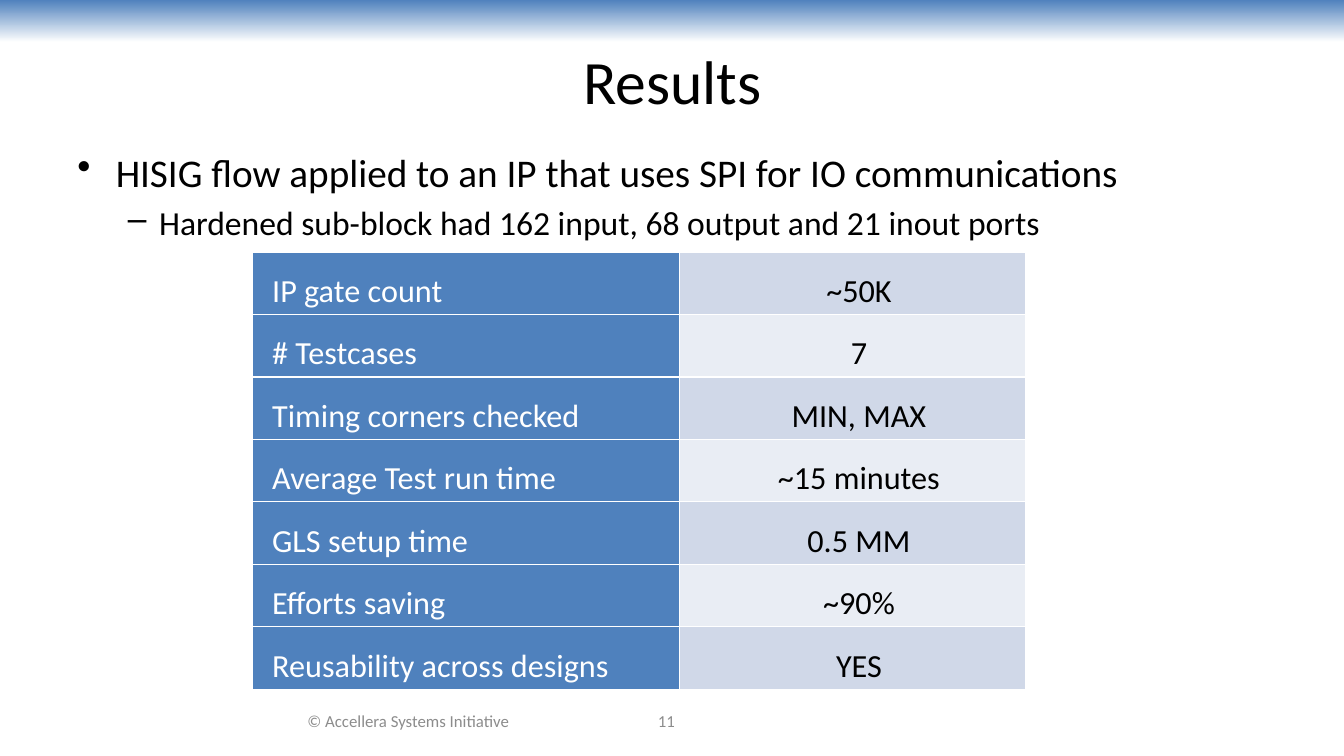
import pptx
import pptx.dml.color
import pptx.enum.shapes
import pptx.enum.text
import pptx.oxml
import pptx.oxml.ns
import pptx.util
from pptx.util import Inches

COLORS = {"blue": "4F81BD", "band_dark": "D0D8E8", "band_light": "E9EDF4",
          "white": "FFFFFF", "black": "000000", "gray": "8C8C8C"}
ALIGN = pptx.enum.text.PP_ALIGN
ANCHOR = pptx.enum.text.MSO_ANCHOR


def rgb(name):
    return pptx.dml.color.RGBColor.from_string(COLORS[name])


def write(p, text, size, color, align, margin=0, indent=0, bullet=None):
    """Fill a paragraph; margin and indent are in inches."""
    pPr = p._p.get_or_add_pPr()
    pPr.set("marL", str(Inches(margin)))
    pPr.set("indent", str(Inches(indent)))
    if bullet:
        pptx.oxml.ns.qn("a:buChar")
        bu = pptx.oxml.parse_xml(
            f'<a:buChar {pptx.oxml.ns.nsdecls("a")} char="{bullet}"/>')
        pPr.append(bu)
    p.alignment = align
    r = p.add_run()
    r.text = text
    for key, value in {"name": "Calibri", "size": pptx.util.Pt(size)}.items():
        setattr(r.font, key, value)
    r.font.color.rgb = rgb(color)


prs = pptx.Presentation()
prs.slide_width, prs.slide_height = Inches(13.33), Inches(7.5)
s = prs.slides.add_slide(prs.slide_layouts[6])

# Top band
band = s.shapes.add_shape(pptx.enum.shapes.MSO_SHAPE.RECTANGLE,
                          0, 0, prs.slide_width, Inches(0.42))
band.shadow.inherit = False
band.line.fill.background()
band.fill.gradient()
band.fill.gradient_angle = 270
for stop, position, color in zip(band.fill.gradient_stops, (0, 1), ("blue", "white")):
    stop.position = position
    stop.color.rgb = rgb(color)

# Title, bullets and footer
TEXTS = [
    ((0.67, 0.17, 12, 1.25), ANCHOR.MIDDLE,
     [("Results", 44, "black", ALIGN.CENTER)]),
    ((0.67, 1.42, 12, 1.08), ANCHOR.TOP,
     [("HISIG flow applied to an IP that uses SPI for IO communications",
       28, "black", ALIGN.LEFT, 0.38, -0.38, "•"),
      ("Hardened sub-block had 162 input, 68 output and 21 inout ports",
       24, "black", ALIGN.LEFT, 0.81, -0.31, "–")]),
    ((2.44, 6.95, 3.22, 0.4), ANCHOR.MIDDLE,
     [("© Accellera Systems Initiative", 12, "gray", ALIGN.CENTER)]),
    ((5.33, 6.95, 2.56, 0.4), ANCHOR.MIDDLE,
     [("11", 12, "gray", ALIGN.CENTER)]),
]
for box, anchor, paragraphs in TEXTS:
    tf = s.shapes.add_textbox(*map(Inches, box)).text_frame
    tf.word_wrap = True
    tf.vertical_anchor = anchor
    for i, paragraph in enumerate(paragraphs):
        p = tf.add_paragraph() if i else tf.paragraphs[0]
        write(p, *paragraph)
        if i:
            p.space_before = pptx.util.Pt(0.2 * paragraph[1])

# Results table
RESULTS = [
    ("IP gate count", "~50K"),
    ("# Testcases", "7"),
    ("Timing corners checked", "MIN, MAX"),
    ("Average Test run time", "~15 minutes"),
    ("GLS setup time", "0.5 MM"),
    ("Efforts saving", "~90%"),
    ("Reusability across designs", "YES"),
]
CELL_FORMAT = {"margin_left": Inches(0.07), "margin_right": Inches(0.07),
               "margin_top": 0, "margin_bottom": 0}
ROW_HEIGHT = 0.62
table = s.shapes.add_table(len(RESULTS), 2, Inches(2.5), Inches(2.5), Inches(7.67),
                           Inches(ROW_HEIGHT * len(RESULTS))).table
table.first_row = table.horz_banding = False
for column, width in zip(table.columns, (4.24, 3.43)):
    column.width = Inches(width)
for i, result in enumerate(RESULTS):
    table.rows[i].height = Inches(ROW_HEIGHT)
    value_fill = "band_light" if i % 2 else "band_dark"
    styles = [("blue", "white", ALIGN.JUSTIFY), (value_fill, "black", ALIGN.CENTER)]
    for j, (text, (fill, color, align)) in enumerate(zip(result, styles)):
        cell = table.cell(i, j)
        for key, value in CELL_FORMAT.items():
            setattr(cell, key, value)
        tcPr = cell._tc.get_or_add_tcPr()
        for side in ("lnL", "lnR", "lnT", "lnB"):
            tcPr.append(pptx.oxml.parse_xml(
                f'<a:{side} {pptx.oxml.ns.nsdecls("a")} w="12700"><a:solidFill>'
                f'<a:srgbClr val="{COLORS["white"]}"/></a:solidFill></a:{side}>'))
        cell.fill.solid()
        cell.fill.fore_color.rgb = rgb(fill)
        p = cell.text_frame.paragraphs[0]
        write(p, text, 23, color, align, indent=0.13)
        p.line_spacing = 1.5

prs.save("out.pptx")
